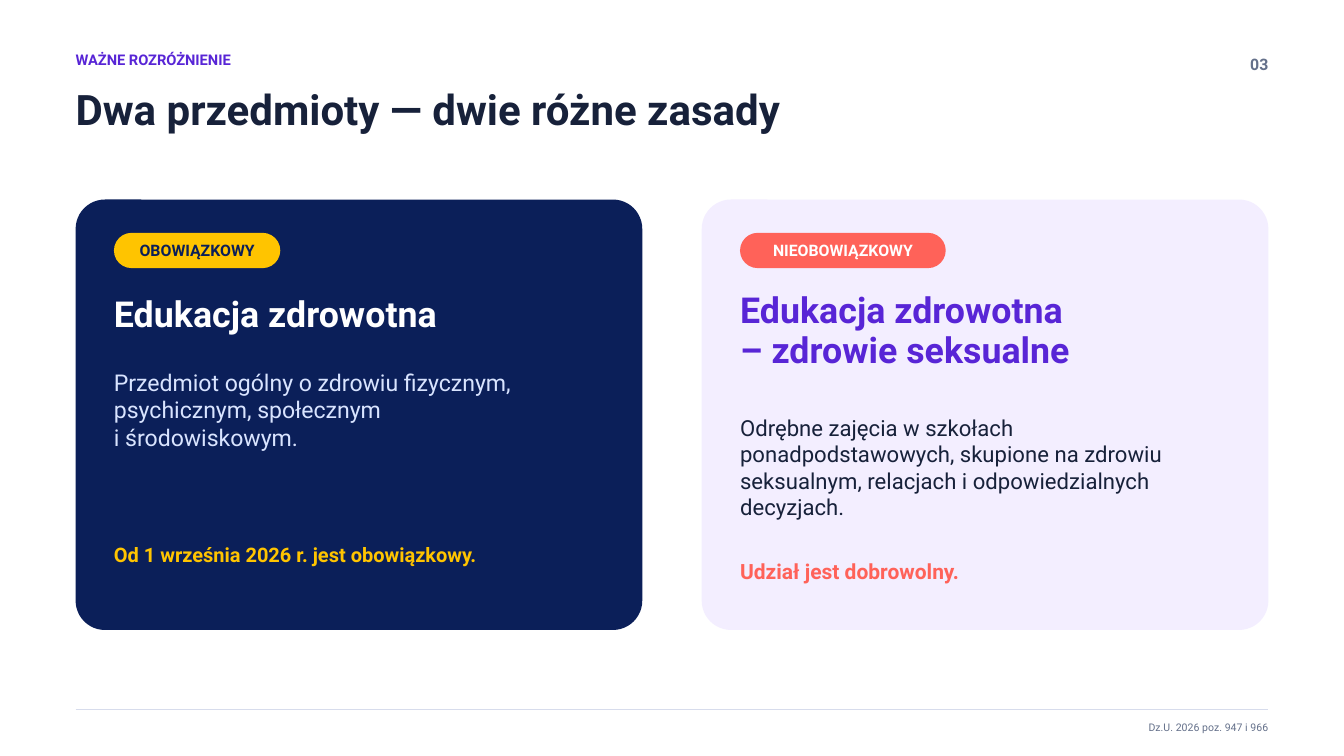
from pptx import Presentation
from pptx.dml.color import RGBColor
from pptx.enum.shapes import MSO_CONNECTOR, MSO_SHAPE
from pptx.enum.text import MSO_ANCHOR, MSO_AUTO_SIZE, PP_ALIGN
from pptx.oxml.ns import qn
from pptx.util import Inches, Pt
from lxml import etree

LEFT, CENTER, RIGHT = PP_ALIGN.LEFT, PP_ALIGN.CENTER, PP_ALIGN.RIGHT
TOP, MIDDLE = MSO_ANCHOR.TOP, MSO_ANCHOR.MIDDLE
ROUNDED = MSO_SHAPE.ROUNDED_RECTANGLE
STRAIGHT = MSO_CONNECTOR.STRAIGHT
NO_AUTOFIT = MSO_AUTO_SIZE.NONE

FONT = "Roboto"
WHITE = RGBColor(0xFF, 0xFF, 0xFF)
INK = RGBColor(0x17, 0x21, 0x3A)
NAVY = RGBColor(0x0B, 0x1F, 0x59)
VIOLET = RGBColor(0x58, 0x25, 0xD6)
LILAC = RGBColor(0xF3, 0xEE, 0xFF)
YELLOW = RGBColor(0xFF, 0xC4, 0x00)
CORAL = RGBColor(0xFF, 0x62, 0x59)
ICE = RGBColor(0xD9, 0xE4, 0xFF)
GREY = RGBColor(0x64, 0x70, 0x8A)
RULE = RGBColor(0xD7, 0xDC, 0xEC)

MARGIN, RIGHT_EDGE = 0.75, 12.58
CARD_TOP, CARD_W, CARD_H, PADDING = 1.98, 5.62, 4.27, 0.38


def write(sp, text, size, color, bold=False, align=LEFT, anchor=TOP, spacing=None):
    """Fill a shape with formatted text, one paragraph per line."""
    tf = sp.text_frame
    tf.word_wrap = True
    tf.auto_size = NO_AUTOFIT
    tf.vertical_anchor = anchor
    tf.margin_left = tf.margin_right = tf.margin_top = tf.margin_bottom = 0
    tf.text = text
    for p in tf.paragraphs:
        p.alignment = align
        p.line_spacing = spacing
        for r in p.runs:
            r.font.name = FONT
            r.font.size = Pt(size)
            r.font.bold = bold
            r.font.color.rgb = color


def add_text(s, left, top, width, height, text, size, color, **fmt):
    """Add a text box."""
    sp = s.shapes.add_textbox(Inches(left), Inches(top), Inches(width), Inches(height))
    write(sp, text, size, color, **fmt)


def add_title(s, text):
    """Move and format the title placeholder."""
    sp = s.shapes.title
    sp.left, sp.top = Inches(MARGIN), Inches(0.83)
    sp.width, sp.height = Inches(10.83), Inches(0.81)
    write(sp, text, 30, INK, bold=True)


def add_rounded(s, left, top, width, height, radius, fill):
    """Add a filled rounded rectangle without outline."""
    sp = s.shapes.add_shape(ROUNDED, Inches(left), Inches(top), Inches(width), Inches(height))
    sp.adjustments[0] = radius
    sp.shadow.inherit = False
    sp.fill.solid()
    sp.fill.fore_color.rgb = fill
    sp.line.fill.background()
    return sp


def add_card(s, left, fill, badge, heading, body, note):
    """Add a subject card with a badge, heading, body and note."""
    add_rounded(s, left, CARD_TOP, CARD_W, CARD_H, 0.068, fill)
    x = left + PADDING
    label, width, badge_fill, badge_color = badge
    pill = add_rounded(s, x, 2.31, width, 0.35, 0.5, badge_fill)
    write(pill, label, 11.3, badge_color, bold=True, align=CENTER, anchor=MIDDLE)
    text, height, color, spacing = heading
    add_text(s, x, 2.9, 4.58, height, text, 25.5, color, bold=True, spacing=spacing)
    text, top, height, size, color = body
    add_text(s, x, top, 4.48, height, text, size, color)
    text, top, height, size, color = note
    add_text(s, x, top, 4.48, height, text, size, color, bold=True)


def add_rule(s, y):
    """Add the thin footer line."""
    line = s.shapes.add_connector(STRAIGHT, Inches(MARGIN), Inches(y), Inches(RIGHT_EDGE), Inches(y))
    line.line.color.rgb = RULE
    line.line.width = Pt(0.75)
    etree.SubElement(line._element.spPr, qn("a:effectLst"))


def main():
    """Build the slide and save it."""
    prs = Presentation()
    prs.slide_width, prs.slide_height = Inches(13.33), Inches(7.5)
    s = prs.slides.add_slide(prs.slide_layouts[5])

    add_text(s, MARGIN, 0.5, 7.29, 0.25, "WAŻNE ROZRÓŻNIENIE", 10.5, VIOLET, bold=True)
    add_title(s, "Dwa przedmioty — dwie różne zasady")
    add_text(s, RIGHT_EDGE - 0.5, 0.54, 0.5, 0.27, "03", 11.3, GREY, bold=True, align=RIGHT)

    add_card(
        s, MARGIN, NAVY,
        badge=("OBOWIĄZKOWY", 1.65, YELLOW, NAVY),
        heading=("Edukacja zdrowotna", 0.57, WHITE, None),
        body=("Przedmiot ogólny o zdrowiu fizycznym, psychicznym, społecznym\n"
              "i środowiskowym.", 3.65, 1.15, 16.5, ICE),
        note=("Od 1 września 2026 r. jest obowiązkowy.", 5.38, 0.42, 14.3, YELLOW),
    )
    add_card(
        s, RIGHT_EDGE - CARD_W, LILAC,
        badge=("NIEOBOWIĄZKOWY", 2.04, CORAL, WHITE),
        heading=("Edukacja zdrowotna\n– zdrowie seksualne", 0.96, VIOLET, 0.92),
        body=("Odrębne zajęcia w szkołach ponadpodstawowych, skupione na zdrowiu "
              "seksualnym, relacjach i odpowiedzialnych decyzjach.", 4.11, 1.23, 15.8, INK),
        note=("Udział jest dobrowolny.", 5.54, 0.35, 15, CORAL),
    )

    add_rule(s, 7.04)
    add_text(s, RIGHT_EDGE - 7.27, 7.15, 7.27, 0.19, "Dz.U. 2026 poz. 947 i 966", 7.5, GREY, align=RIGHT)
    prs.save("out.pptx")


if __name__ == "__main__":
    main()
